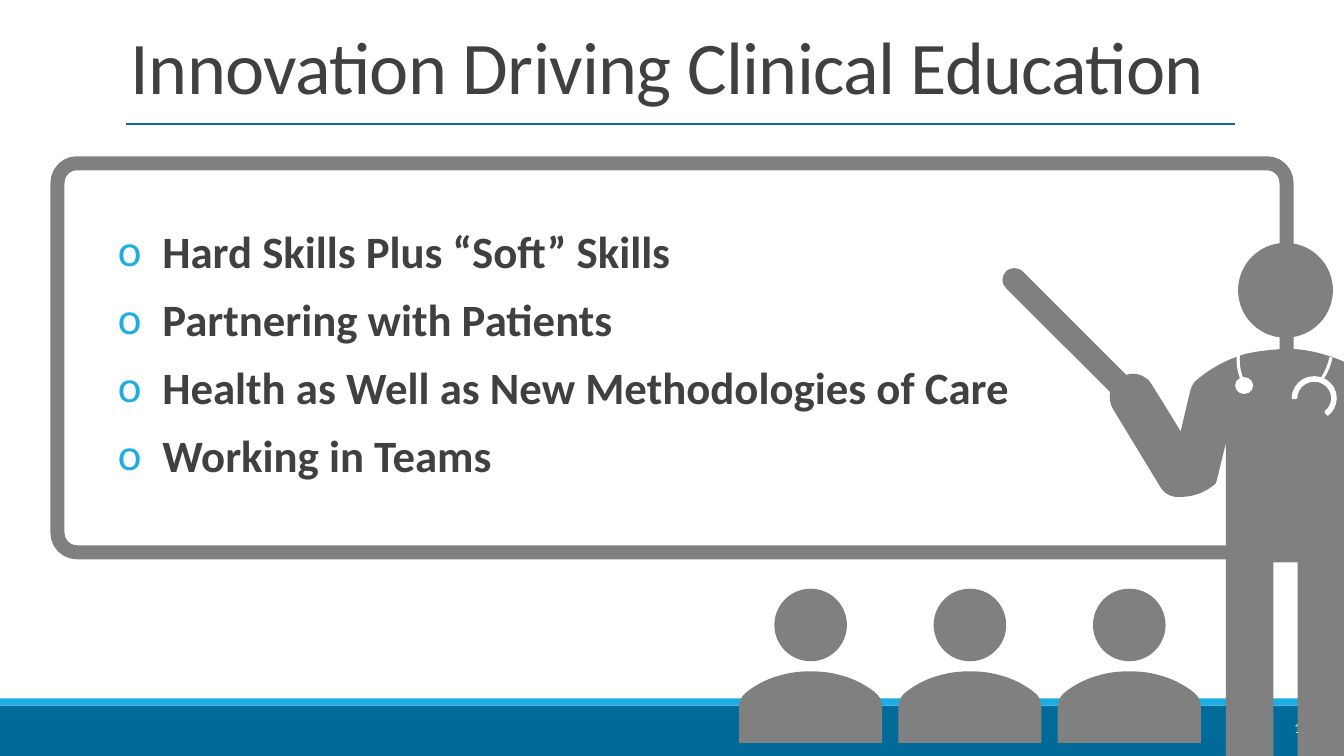
from dataclasses import dataclass

from lxml import etree
from pptx import Presentation
from pptx.dml.color import RGBColor
from pptx.enum.shapes import MSO_CONNECTOR, MSO_SHAPE
from pptx.enum.text import MSO_ANCHOR, PP_ALIGN
from pptx.oxml.ns import qn
from pptx.util import Inches, Pt

RECT, ROUND, OVAL = MSO_SHAPE.RECTANGLE, MSO_SHAPE.ROUNDED_RECTANGLE, MSO_SHAPE.OVAL
ARC, RING = MSO_SHAPE.ARC, MSO_SHAPE.BLOCK_ARC
LINE = MSO_CONNECTOR.STRAIGHT
TOP, MID = MSO_ANCHOR.TOP, MSO_ANCHOR.MIDDLE
LEFT, RIGHT = PP_ALIGN.LEFT, PP_ALIGN.RIGHT


@dataclass(frozen=True)
class Theme:
    """Colours, font and type sizes of the slide."""
    font: str = "Calibri"
    ink: str = "404040"
    blue: str = "006A99"
    sky: str = "1CADE4"
    gray: str = "808080"
    white: str = "FFFFFF"
    title: float = 53
    body: float = 32
    small: float = 10.5


THEME = Theme()

POINTS = [
    "Hard Skills Plus “Soft” Skills",
    "Partnering with Patients",
    "Health as Well as New Methodologies of Care",
    "Working in Teams",
]

BUST = [
    (-0.71, 7.37), (-0.71, 7.02),
    (-0.71, 6.96, -0.69, 6.91, -0.64, 6.87),
    (-0.54, 6.79, -0.42, 6.73, -0.3, 6.7),
    (-0.2, 6.67, -0.1, 6.66, 0, 6.66),
    (0.1, 6.66, 0.2, 6.67, 0.3, 6.7),
    (0.42, 6.73, 0.54, 6.79, 0.64, 6.87),
    (0.69, 6.91, 0.71, 6.96, 0.71, 7.02),
    (0.71, 7.37),
]

DOCTOR = [
    (9.98, 2.69), (10.02, 2.65, 10.1, 2.65, 10.14, 2.69),
    (11.17, 3.72), (11.25, 3.69, 11.34, 3.72, 11.4, 3.78),
    (11.41, 3.79, 11.71, 4.28, 11.71, 4.28),
    (11.8, 3.9), (11.81, 3.85, 11.83, 3.8, 11.87, 3.77),
    (12.01, 3.65, 12.18, 3.56, 12.36, 3.51),
    (12.49, 3.48, 12.62, 3.47, 12.75, 3.46),
    (12.88, 3.46, 13.01, 3.48, 13.14, 3.52),
    (13.32, 3.57, 13.49, 3.66, 13.63, 3.78),
    (13.66, 3.82, 13.69, 3.86, 13.7, 3.91),
    (13.7, 3.91, 14.04, 5.34, 14.04, 5.37),
    (14.04, 5.5, 13.93, 5.6, 13.8, 5.6),
    (13.7, 5.6, 13.61, 5.53, 13.58, 5.43),
    (13.33, 4.41), (13.33, 7.69), (12.87, 7.69), (12.87, 5.58),
    (12.63, 5.58), (12.63, 7.69), (12.16, 7.69), (12.16, 4.39),
    (12.07, 4.76), (12.07, 4.79, 12.05, 4.81, 12.03, 4.82),
    (11.94, 4.89, 11.83, 4.93, 11.71, 4.93),
    (11.64, 4.94, 11.56, 4.91, 11.52, 4.85),
    (11.04, 4.06), (11.01, 4.01, 11, 3.95, 11.01, 3.89),
    (9.98, 2.86), (9.93, 2.82, 9.93, 2.74, 9.98, 2.69),
]


def color(code):
    """Turn a hex code into a colour."""
    return RGBColor.from_string(code)


def paint(shape, fill=None, line=None, width=1):
    """Set fill and line, and drop the shadow."""
    shape.shadow.inherit = False
    if fill:
        shape.fill.solid()
        shape.fill.fore_color.rgb = color(fill)
    else:
        shape.fill.background()
    if line:
        shape.line.color.rgb = color(line)
        shape.line.width = Pt(width)
    else:
        shape.line.fill.background()


def add_form(slide, kind, box, adjust=(), turn=0, **look):
    """Add a preset shape."""
    shape = slide.shapes.add_shape(kind, *map(Inches, box))
    for index, value in enumerate(adjust):
        shape.adjustments[index] = value
    shape.rotation = turn
    paint(shape, **look)


def add_rule(slide, start, end, tint, width):
    """Add a straight line."""
    rule = slide.shapes.add_connector(LINE, *map(Inches, start + end))
    rule.line.color.rgb = color(tint)
    rule.line.width = Pt(width)
    etree.SubElement(rule.element.spPr, qn("a:effectLst"))


def bend(shape, steps):
    """Join the three segments of each six-number step into one curve."""
    parts = iter(list(shape.element.spPr.iter(qn("a:lnTo"))))
    for step in steps[1:]:
        first = next(parts)
        if len(step) == 6:
            first.tag = qn("a:cubicBezTo")
            for part in (next(parts), next(parts)):
                first.append(part[0])
                part.getparent().remove(part)


def add_shape_of(slide, steps, shift=0):
    """Add a filled gray outline, moved sideways by shift."""
    dots = [(Inches(step[i] + shift), Inches(step[i + 1]))
            for step in steps for i in range(0, len(step), 2)]
    form = slide.shapes.build_freeform(*dots[0])
    form.add_line_segments(dots[1:], close=False)
    shape = form.convert_to_shape()
    bend(shape, steps)
    paint(shape, fill=THEME.gray)


def add_bullet(para, mark, tint, indent):
    """Give a paragraph a coloured bullet and a hanging indent."""
    props = para._p.get_or_add_pPr()
    props.set("marL", str(Inches(indent)))
    props.set("indent", str(-Inches(indent)))
    shade = etree.SubElement(props, qn("a:buClr"))
    etree.SubElement(shade, qn("a:srgbClr"), val=tint)
    etree.SubElement(props, qn("a:buFont"), typeface=THEME.font)
    etree.SubElement(props, qn("a:buChar"), char=mark)


def add_text(slide, box, lines, size, tint=THEME.ink, bold=False, align=LEFT,
             anchor=TOP, pad=0.1, space=1, before=0, after=0, mark=None, track=0):
    """Add a text box with one paragraph for each line."""
    frame = slide.shapes.add_textbox(*map(Inches, box)).text_frame
    frame.word_wrap = True
    frame.vertical_anchor = anchor
    frame.margin_left = frame.margin_right = Inches(pad)
    for index, line in enumerate(lines):
        para = frame.add_paragraph() if index else frame.paragraphs[0]
        para.alignment = align
        para.line_spacing = space
        para.space_before = Pt(before if index else 0)
        para.space_after = Pt(after)
        if mark:
            add_bullet(para, mark, THEME.sky, 0.44)
        run = para.add_run()
        run.text = line
        font = run.font
        font.name, font.size, font.bold = THEME.font, Pt(size), bold
        font.color.rgb = color(tint)
        if track:
            run._r.get_or_add_rPr().set("spc", str(round(track * 100)))


def add_crowd(slide):
    """Add the three listeners at equal gaps."""
    for index in range(3):
        mid = 8.04 + 1.58 * index
        add_form(slide, OVAL, (mid - 0.36, 5.84, 0.72, 0.72), fill=THEME.gray)
        add_shape_of(slide, BUST, mid)


def add_doctor(slide):
    """Add the presenter with pointer and stethoscope."""
    white = THEME.white
    add_form(slide, OVAL, (12.28, 2.41, 0.94, 0.94), fill=THEME.gray)
    add_shape_of(slide, DOCTOR)
    add_form(slide, ARC, (12.28, 3.07, 1, 1), (196.35, 214.54), 189.8,
             line=white, width=2.25)
    add_form(slide, OVAL, (12.26, 3.75, 0.16, 0.15), fill=white, line=white, width=1.25)
    add_form(slide, ARC, (12.38, 2.95, 0.83, 1.01), (109.46, 127.65), 189.8,
             line=white, width=2.25)
    add_form(slide, RING, (12.82, 3.74, 0.43, 0.42), (108, 30.7, 0.09),
             fill=white, line=white, width=1.25)


def main():
    """Build the slide and save it."""
    deck = Presentation()
    deck.slide_width, deck.slide_height = Inches(13.33), Inches(7.5)
    slide = deck.slides.add_slide(deck.slide_layouts[6])
    add_form(slide, RECT, (0, 7, 13.33, 0.5), fill=THEME.blue)
    add_form(slide, RECT, (0, 6.93, 13.33, 0.07), fill=THEME.sky)
    add_rule(slide, (1.25, 1.23), (12.25, 1.23), THEME.blue, 1.5)
    add_text(slide, (1.2, 0.2, 11, 1.02), ["Innovation Driving Clinical Education"],
             THEME.title, anchor=MID, space=0.85, track=-0.5)
    add_text(slide, (1.17, 2.23, 11, 4.43), POINTS, THEME.body, bold=True, pad=0,
             space=0.9, before=12, after=2, mark="o")
    add_text(slide, (11.65, 7.02, 1.43, 0.4), ["18"], THEME.small, THEME.white,
             align=RIGHT, anchor=MID)
    add_form(slide, ROUND, (0.57, 1.62, 12.19, 3.86), (0.05,),
             line=THEME.gray, width=10)
    add_crowd(slide)
    add_doctor(slide)
    deck.save("out.pptx")


if __name__ == "__main__":
    main()
